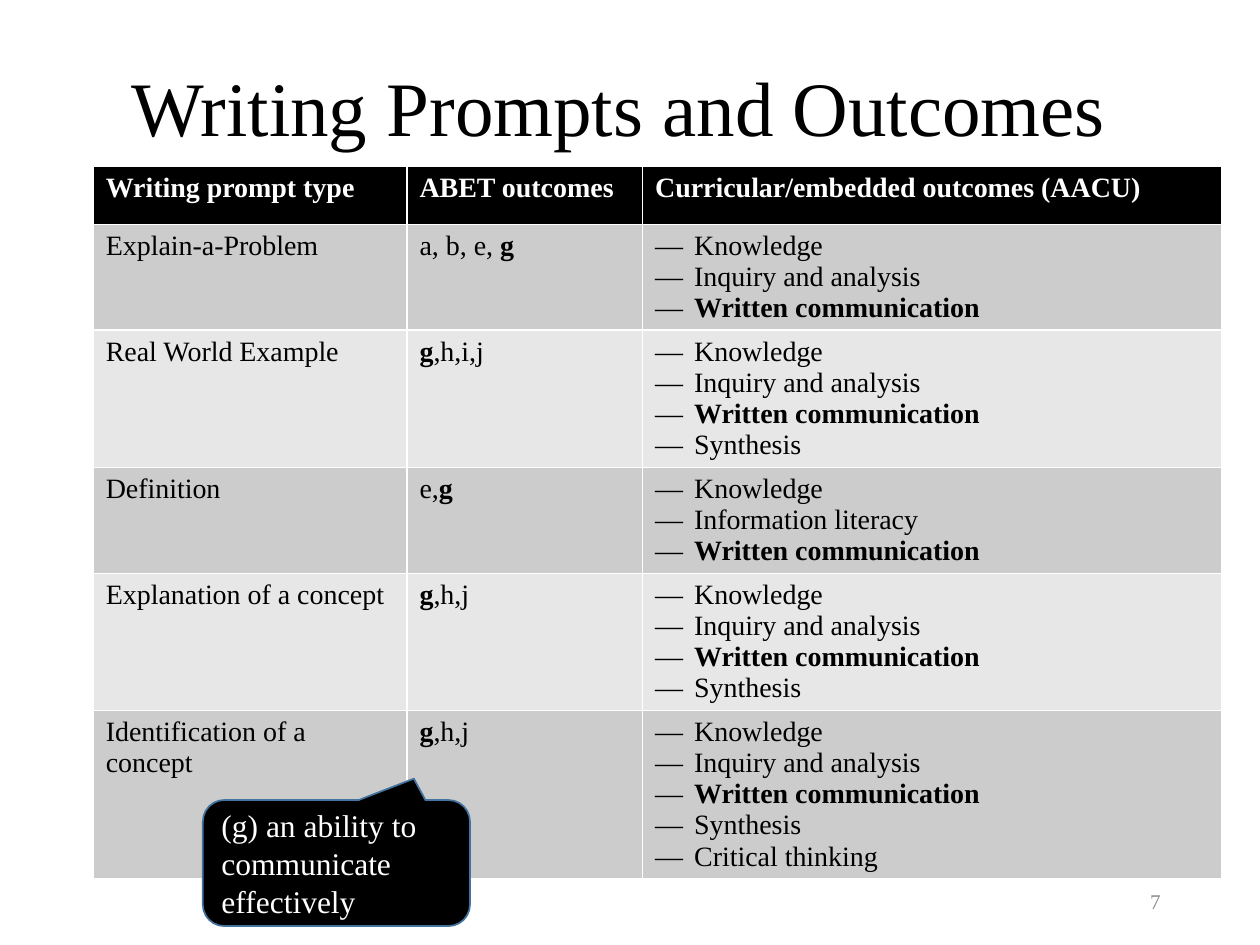
from dataclasses import dataclass

from lxml import etree
from pptx import Presentation
from pptx.dml.color import RGBColor
from pptx.enum.shapes import MSO_SHAPE
from pptx.enum.text import MSO_ANCHOR, MSO_AUTO_SIZE, PP_ALIGN
from pptx.oxml.ns import qn
from pptx.util import Inches, Pt

LEFT, RIGHT = PP_ALIGN.LEFT, PP_ALIGN.RIGHT
MIDDLE = MSO_ANCHOR.MIDDLE
NO_AUTOFIT = MSO_AUTO_SIZE.NONE
CALLOUT = MSO_SHAPE.ROUNDED_RECTANGULAR_CALLOUT
TITLE_ONLY = 5

HEADERS = ["Writing prompt type", "ABET outcomes", "Curricular/embedded outcomes (AACU)"]
KNOWLEDGE, INQUIRY, WRITTEN = "Knowledge", "Inquiry and analysis", "*Written communication*"
SYNTHESIS = "Synthesis"
PROMPTS = [
    ("Explain-a-Problem", "a, b, e, *g*", [KNOWLEDGE, INQUIRY, WRITTEN]),
    ("Real World Example", "*g*,h,i,j", [KNOWLEDGE, INQUIRY, WRITTEN, SYNTHESIS]),
    ("Definition", "e,*g*", [KNOWLEDGE, "Information literacy", WRITTEN]),
    ("Explanation of a concept", "*g*,h,j", [KNOWLEDGE, INQUIRY, WRITTEN, SYNTHESIS]),
    ("Identification of a concept", "*g*,h,j",
     [KNOWLEDGE, INQUIRY, WRITTEN, SYNTHESIS, "Critical thinking"]),
]
COLUMN_WIDTHS = [2.49, 1.87, 4.6]
ROW_HEIGHTS = [0.46, 0.83, 1.07, 0.83, 1.07, 1.32]


@dataclass(frozen=True)
class Theme:
    font: str = "Times New Roman"
    dark: RGBColor = RGBColor(0x00, 0x00, 0x00)
    light: RGBColor = RGBColor(0xFF, 0xFF, 0xFF)
    muted: RGBColor = RGBColor(0x8C, 0x8C, 0x8C)
    outline: RGBColor = RGBColor(0x43, 0x73, 0x9E)
    bands: tuple = (RGBColor(0xCC, 0xCC, 0xCC), RGBColor(0xE7, 0xE7, 0xE7))
    title_size: int = 44
    callout_size: int = 18
    table_size: int = 16
    number_size: int = 12


class SlideBuilder:
    """Adds styled elements to one slide."""

    def __init__(self, slide, theme):
        self.slide = slide
        self.theme = theme

    def style(self, paragraph, size, color, alignment=LEFT):
        paragraph.alignment = alignment
        font = paragraph.font
        font.name, font.size = self.theme.font, Pt(size)
        font.color.rgb = color

    def bullet(self, paragraph):
        properties = paragraph._p.get_or_add_pPr()
        properties.set("marL", str(Inches(0.31)))
        properties.set("indent", str(-Inches(0.31)))
        character = etree.Element(qn("a:buChar"), char="―")
        typeface = etree.Element(qn("a:buFont"), typeface=self.theme.font)
        properties.insert(0, character)
        properties.insert(0, typeface)

    def title(self, text, left, top, width, height):
        shape = self.slide.shapes.title
        shape.left, shape.top = Inches(left), Inches(top)
        shape.width, shape.height = Inches(width), Inches(height)
        frame = shape.text_frame
        frame.text = text
        frame.auto_size = NO_AUTOFIT
        frame.vertical_anchor = MIDDLE
        paragraph = frame.paragraphs[0]
        paragraph.line_spacing = 0.9
        self.style(paragraph, self.theme.title_size, self.theme.dark)

    def cell(self, cell, lines, fill, color, bold=False, bulleted=False):
        cell.fill.solid()
        cell.fill.fore_color.rgb = fill
        frame = cell.text_frame
        for index, line in enumerate(lines):
            paragraph = frame.add_paragraph() if index else frame.paragraphs[0]
            self.style(paragraph, self.theme.table_size, color)
            if bulleted:
                self.bullet(paragraph)
            for position, piece in enumerate(line.split("*")):
                if piece:
                    run = paragraph.add_run()
                    run.text = piece
                    run.font.bold = bold or position % 2 == 1

    def table(self, headers, rows, left, top, widths, heights):
        table = self.slide.shapes.add_table(
            len(heights), len(widths), Inches(left), Inches(top),
            Inches(sum(widths)), Inches(sum(heights))).table
        for column, width in zip(table.columns, widths):
            column.width = Inches(width)
        for row, height in zip(table.rows, heights):
            row.height = Inches(height)
        for column, header in enumerate(headers):
            self.cell(table.cell(0, column), [header], self.theme.dark, self.theme.light, bold=True)
        for row, (prompt, abet, outcomes) in enumerate(rows, start=1):
            fill = self.theme.bands[(row - 1) % 2]
            self.cell(table.cell(row, 0), [prompt], fill, self.theme.dark)
            self.cell(table.cell(row, 1), [abet], fill, self.theme.dark)
            self.cell(table.cell(row, 2), outcomes, fill, self.theme.dark, bulleted=True)

    def slide_number(self, text, left, top, width, height):
        box = self.slide.shapes.add_textbox(
            Inches(left), Inches(top), Inches(width), Inches(height))
        frame = box.text_frame
        frame.text = text
        frame.word_wrap = True
        frame.vertical_anchor = MIDDLE
        self.style(frame.paragraphs[0], self.theme.number_size, self.theme.muted, RIGHT)

    def callout(self, text, left, top, width, height, adjustments):
        shape = self.slide.shapes.add_shape(
            CALLOUT, Inches(left), Inches(top), Inches(width), Inches(height))
        shape.shadow.inherit = False
        for index, value in enumerate(adjustments):
            shape.adjustments[index] = value
        shape.fill.solid()
        shape.fill.fore_color.rgb = self.theme.dark
        shape.line.color.rgb = self.theme.outline
        shape.line.width = Pt(1)
        frame = shape.text_frame
        frame.text = text
        frame.word_wrap = True
        frame.vertical_anchor = MIDDLE
        self.style(frame.paragraphs[0], self.theme.callout_size, self.theme.light)


def main():
    presentation = Presentation()
    presentation.slide_width, presentation.slide_height = Inches(10), Inches(7.5)
    slide = presentation.slides.add_slide(presentation.slide_layouts[TITLE_ONLY])
    builder = SlideBuilder(slide, Theme())
    builder.title("Writing Prompts and Outcomes", 0.94, 0.16, 8.62, 1.45)
    builder.table(HEADERS, PROMPTS, 0.74, 1.32, COLUMN_WIDTHS, ROW_HEIGHTS)
    builder.slide_number("7", 7.06, 6.95, 2.25, 0.4)
    builder.callout("(g) an ability to communicate effectively",
                    1.61, 6.35, 2.12, 1, (0.29, -0.67, 0.17))
    presentation.save("out.pptx")


if __name__ == "__main__":
    main()
